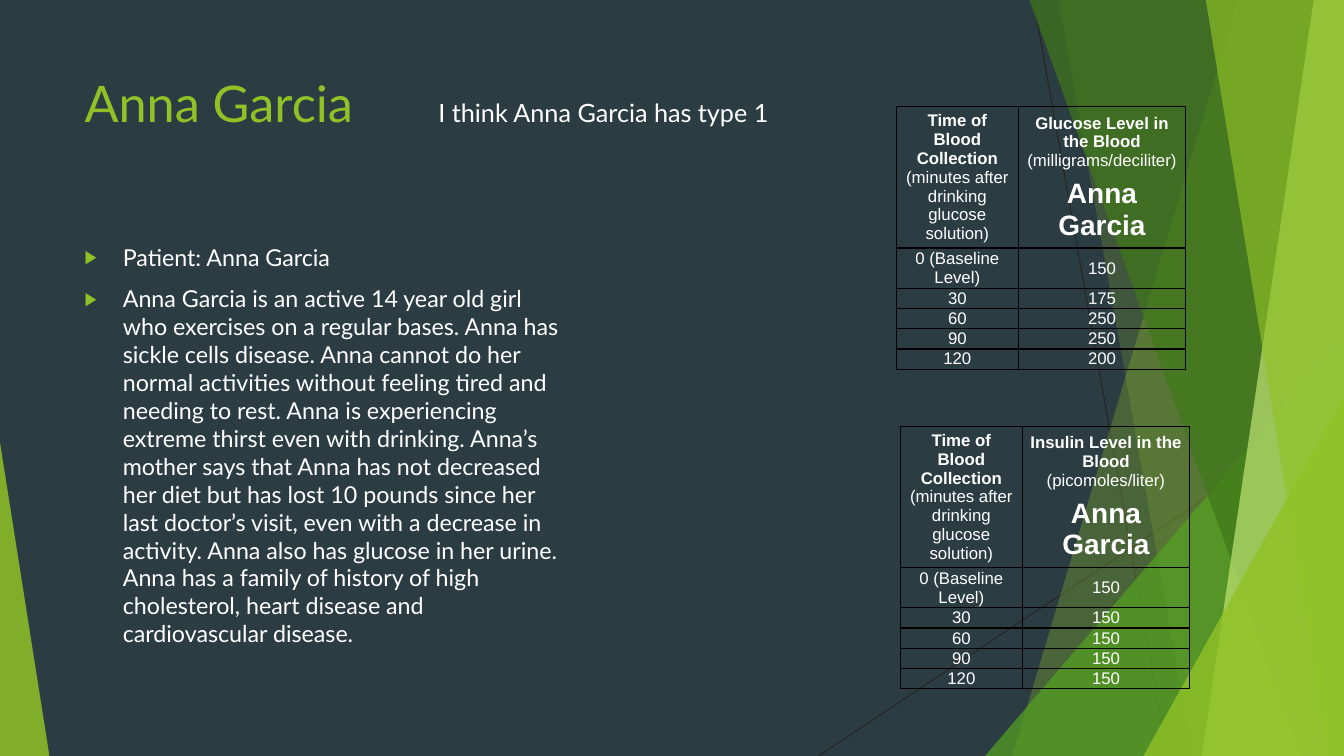
"""Build the Anna Garcia case slide with glucose and insulin tables."""
from dataclasses import dataclass
from typing import Any

from lxml.etree import SubElement
from pptx import Presentation
from pptx.dml.color import RGBColor
from pptx.enum.shapes import MSO_CONNECTOR, MSO_SHAPE
from pptx.enum.text import MSO_ANCHOR, PP_ALIGN
from pptx.oxml.ns import qn
from pptx.util import Inches, Pt


@dataclass(frozen=True)
class Theme:
    """Colours, fonts and type sizes of the slide."""
    background: str = "2C3C43"
    lime: str = "90C226"
    green: str = "54A021"
    forest: str = "3F7819"
    pale: str = "C0E474"
    hairline: str = "262626"
    border: str = "000000"
    text: str = "FFFFFF"
    font: str = "Lato"
    table_font: str = "Arial"
    title: float = 36
    remark: float = 18
    body: float = 16.6
    cell: float = 12
    patient: float = 20


@dataclass(frozen=True)
class Hairline:
    """A thin line between two points."""
    start: tuple[float, float]
    end: tuple[float, float]


@dataclass(frozen=True)
class Facet:
    """A full-height panel that reaches the right edge."""
    top_x: float
    bottom_x: float
    color: str
    alpha: int


@dataclass(frozen=True)
class Wedge:
    """A triangle that stands on the bottom edge."""
    left: float
    top: float
    width: float
    apex: float
    color: str
    alpha: int


@dataclass(frozen=True)
class TextBlock:
    """A text box with one format for all its paragraphs."""
    box: tuple[float, float, float, float]
    paragraphs: tuple[str, ...]
    size: float
    color: str
    bulleted: bool = False


@dataclass(frozen=True)
class LevelTable:
    """A table of blood levels over time."""
    left: float
    top: float
    measure: str
    unit: str
    levels: tuple[int, ...]


WIDTH, HEIGHT = 13.33, 7.5
T = Theme()
PATIENT = "Anna Garcia"
TIMES = ("0 (Baseline Level)", "30", "60", "90", "120")
COLUMNS = (1.21, 1.66)
ROWS = (1.3, 0.38, 0.19, 0.19, 0.19, 0.19)
CELL_FORMAT = {"margin_left": Inches(0.07), "margin_right": Inches(0.07), "margin_top": 0,
               "margin_bottom": 0, "vertical_anchor": MSO_ANCHOR.MIDDLE}
TABLE_FLAGS = {"first_row": False, "horz_banding": False}

HAIRLINES = (Hairline((10.25, 0), (11.58, HEIGHT)), Hairline((WIDTH, 4.03), (8.12, HEIGHT)))
DECOR = (
    Facet(12.28, 10.04, T.lime, 30),
    Facet(10.5, 11.83, T.lime, 20),
    Wedge(9.77, 3.33, 3.56, 1, T.green, 72),
    Facet(10.21, 12.91, T.forest, 70),
    Facet(13.03, 11.92, T.pale, 70),
    Facet(11.96, 13.18, T.lime, 65),
    Wedge(11.34, 3.93, 1.99, 1, T.lime, 80),
    Wedge(0, 4.39, 0.49, 0, T.lime, 85),
)
TEXTS = (
    TextBlock((0.74, 0.67, 9.4, 1.44), (PATIENT,), T.title, T.lime),
    TextBlock((0.74, 2.36, 4.95, 4.24), (
        "Patient: Anna Garcia",
        "Anna Garcia is an active 14 year old girl who exercises on a regular bases. "
        "Anna has sickle cells disease. Anna cannot do her normal activities without "
        "feeling tired and needing to rest. Anna is experiencing extreme thirst even with "
        "drinking. Anna’s mother says that Anna has not decreased her diet but has lost 10 "
        "pounds since her last doctor’s visit, even with a decrease in activity. Anna also "
        "has glucose in her urine. Anna has a family of history of high cholesterol, heart "
        "disease and cardiovascular disease.",
    ), T.body, T.text, True),
    TextBlock((4.25, 0.92, 3.54, 0.71), ("I think Anna Garcia has type 1",), T.remark, T.text),
)
TABLES = (
    LevelTable(8.89, 1.06, "Glucose Level in the Blood", "(milligrams/deciliter)",
               (150, 175, 250, 250, 200)),
    LevelTable(8.93, 4.23, "Insulin Level in the Blood", "(picomoles/liter)",
               (150, 150, 150, 150, 150)),
)


def apply(target: Any, values: dict[str, Any]) -> None:
    """Set each named attribute on the target."""
    for name, value in values.items():
        setattr(target, name, value)


def add_run(p: Any, text: str, size: float, color: str, font: str, bold: bool = False) -> None:
    """Add a formatted run to a paragraph."""
    r = p.add_run()
    r.text = text
    apply(r.font, {"size": Pt(size), "name": font, "bold": bold})
    r.font.color.rgb = RGBColor.from_string(color)


def add_hairline(s: Any, line: Hairline) -> None:
    """Draw a thin line without a shadow."""
    points = [Inches(v) for v in (*line.start, *line.end)]
    sp = s.shapes.add_connector(MSO_CONNECTOR.STRAIGHT, *points)
    sp.line.color.rgb = RGBColor.from_string(T.hairline)
    sp.line.width = Pt(0.75)
    SubElement(sp._element.spPr, qn("a:effectLst"))


def add_decor(s: Any, item: Facet | Wedge) -> None:
    """Draw a translucent panel or triangle."""
    if isinstance(item, Facet):
        outline = s.shapes.build_freeform(Inches(item.top_x), 0)
        corners = ((WIDTH, 0), (WIDTH, HEIGHT), (item.bottom_x, HEIGHT))
        outline.add_line_segments([(Inches(x), Inches(y)) for x, y in corners])
        sp = outline.convert_to_shape()
    else:
        box = (item.left, item.top, item.width, HEIGHT - item.top)
        sp = s.shapes.add_shape(MSO_SHAPE.ISOSCELES_TRIANGLE, *map(Inches, box))
        sp.adjustments[0] = item.apex
    sp.shadow.inherit = False
    sp.line.fill.background()
    sp.fill.solid()
    sp.fill.fore_color.rgb = RGBColor.from_string(item.color)
    color = sp._element.spPr.find(qn("a:solidFill"))[0]
    SubElement(color, qn("a:alpha"), val=str(item.alpha * 1000))


def add_bullet(p: Any) -> None:
    """Give a paragraph a hanging arrow bullet."""
    p.space_before = Pt(10)
    props = p._p.get_or_add_pPr()
    props.set("marL", str(Inches(0.38)))
    props.set("indent", str(-Inches(0.38)))
    SubElement(SubElement(props, qn("a:buClr")), qn("a:srgbClr"), val=T.lime)
    SubElement(props, qn("a:buSzPct"), val="80000")
    SubElement(props, qn("a:buFont"), typeface=T.table_font)
    SubElement(props, qn("a:buChar"), char="▶")


def add_text(s: Any, block: TextBlock) -> None:
    """Draw a text box."""
    tf = s.shapes.add_textbox(*map(Inches, block.box)).text_frame
    tf.word_wrap = True
    for i, text in enumerate(block.paragraphs):
        p = tf.add_paragraph() if i else tf.paragraphs[0]
        if block.bulleted:
            add_bullet(p)
        add_run(p, text, block.size, block.color, T.font)


def fill_cell(cell: Any, paragraphs: list[list[tuple[str, float, bool]]]) -> None:
    """Write centred text in a bordered, unfilled cell."""
    apply(cell, CELL_FORMAT)
    props = cell._tc.get_or_add_tcPr()
    for side in ("lnL", "lnR", "lnT", "lnB"):
        ln = SubElement(props, qn(f"a:{side}"), w=str(Pt(1)))
        SubElement(SubElement(ln, qn("a:solidFill")), qn("a:srgbClr"), val=T.border)
    cell.fill.background()
    tf = cell.text_frame
    for i, runs in enumerate(paragraphs):
        p = tf.add_paragraph() if i else tf.paragraphs[0]
        apply(p, {"alignment": PP_ALIGN.CENTER, "space_after": Pt(6)})
        for text, size, bold in runs:
            add_run(p, text, size, T.text, T.table_font, bold)


def add_levels(s: Any, spec: LevelTable) -> None:
    """Draw a table of times and levels."""
    box = (spec.left, spec.top, sum(COLUMNS), sum(ROWS))
    table = s.shapes.add_table(len(ROWS), len(COLUMNS), *map(Inches, box)).table
    apply(table, TABLE_FLAGS)
    for column, width in zip(table.columns, COLUMNS):
        column.width = Inches(width)
    for row, height in zip(table.rows, ROWS):
        row.height = Inches(height)
    fill_cell(table.cell(0, 0), [[("Time of Blood Collection", T.cell, True),
                                  (" (minutes after drinking glucose solution)", T.cell, False)]])
    fill_cell(table.cell(0, 1), [[(spec.measure, T.cell, True), (f" {spec.unit}", T.cell, False)],
                                 [(PATIENT, T.patient, True)]])
    for i, values in enumerate(zip(TIMES, spec.levels), 1):
        for j, value in enumerate(values):
            fill_cell(table.cell(i, j), [[(str(value), T.cell, False)]])


def main() -> None:
    """Build and save the slide."""
    prs = Presentation()
    apply(prs, {"slide_width": Inches(WIDTH), "slide_height": Inches(HEIGHT)})
    s = prs.slides.add_slide(prs.slide_layouts[6])
    s.background.fill.solid()
    s.background.fill.fore_color.rgb = RGBColor.from_string(T.background)
    for items, draw in ((HAIRLINES, add_hairline), (DECOR, add_decor),
                        (TEXTS[:2], add_text), (TABLES, add_levels), (TEXTS[2:], add_text)):
        for item in items:
            draw(s, item)
    prs.save("out.pptx")


if __name__ == "__main__":
    main()
